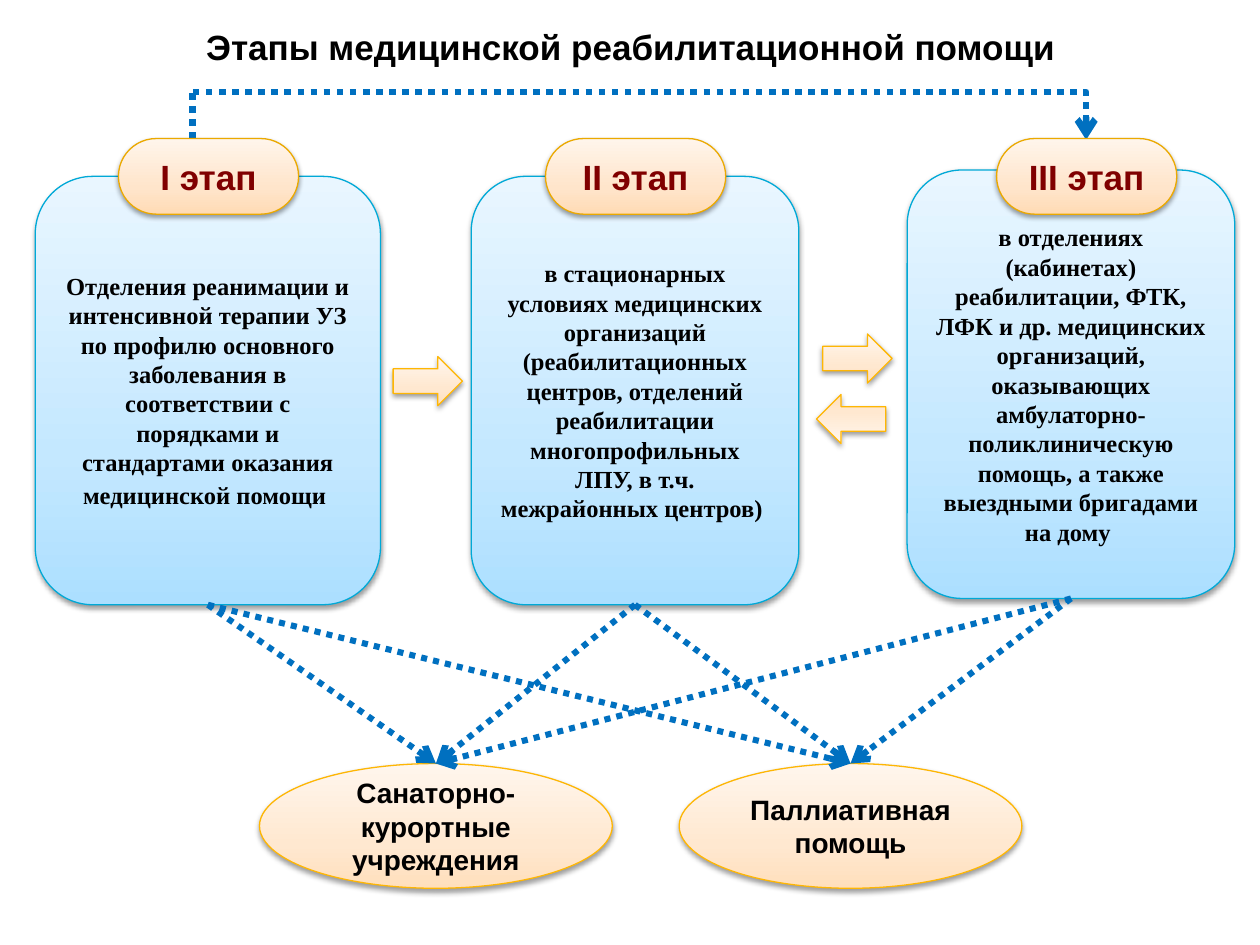
from copy import deepcopy

from lxml import etree
from pptx import Presentation
from pptx.dml.color import RGBColor
from pptx.enum.dml import MSO_LINE
from pptx.enum.shapes import MSO_CONNECTOR, MSO_SHAPE
from pptx.enum.text import MSO_ANCHOR, PP_ALIGN
from pptx.oxml.ns import qn
from pptx.util import Inches, Pt

ROUNDED, OVAL, ARROW = MSO_SHAPE.ROUNDED_RECTANGLE, MSO_SHAPE.OVAL, MSO_SHAPE.RIGHT_ARROW
STRAIGHT, ELBOW = MSO_CONNECTOR.STRAIGHT, MSO_CONNECTOR.ELBOW
DOTTED = MSO_LINE.ROUND_DOT
MIDDLE, CENTER = MSO_ANCHOR.MIDDLE, PP_ALIGN.CENTER
TOP, BOTTOM = 0, 2

COLORS = {"text": "000000", "badge_text": "800000", "route": "0070C0",
          "panel_line": "00A9D7", "accent_line": "FEB604", "badge_line": "EBA900"}
# Gradients run from the bottom edge to the top edge
GRADIENTS = {"panel": ("ACDFFF", "C4E8FF", "E9F6FF"),
             "accent": ("FFDFBC", "FFE8D0", "FFF6ED"),
             "badge": ("FFDBB5", "FFE5CB", "FFF5EB")}
STOPS = (0, 0.35, 1)
FORMATS = {"title": {"name": "Arial", "size": Pt(20), "bold": True},
           "panel": {"name": "Times New Roman", "size": Pt(14), "bold": True},
           "accent": {"name": "Arial", "size": Pt(16), "bold": True},
           "badge": {"name": "Arial", "size": Pt(20), "bold": True}}

deck = Presentation()
deck.slide_width, deck.slide_height = Inches(10), Inches(7.5)
page = deck.slides.add_slide(deck.slide_layouts[6])


def write(box, text, style, color="text"):
    frame = box.text_frame
    frame.word_wrap = True
    frame.vertical_anchor = MIDDLE
    para = frame.paragraphs[0]
    para.alignment = CENTER
    span = para.add_run()
    span.text = text
    for key, value in FORMATS[style].items():
        setattr(span.font, key, value)
    span.font.color.rgb = RGBColor.from_string(COLORS[color])
    return para


def add_block(kind, place, style):
    block = page.shapes.add_shape(kind, *map(Inches, place))
    block.line.color.rgb = RGBColor.from_string(COLORS[style + "_line"])
    block.line.width = Pt(0.75)
    # Three-stop gradient
    block.fill.gradient()
    block.fill.gradient_angle = 90
    stop_list = block._element.spPr.find(qn("a:gradFill")).find(qn("a:gsLst"))
    stop_list.insert(1, deepcopy(stop_list[0]))
    for stop, position, color in zip(block.fill.gradient_stops, STOPS, GRADIENTS[style]):
        stop.position = position
        stop.color.rgb = RGBColor.from_string(color)
    # Soft shadow below
    block.shadow.inherit = False
    effects = block._element.spPr.find(qn("a:effectLst"))
    shadow = etree.SubElement(effects, qn("a:outerShdw"), blurRad=str(Pt(3.1)),
                              dist=str(Pt(1.6)), dir="5400000", rotWithShape="0")
    tint = etree.SubElement(shadow, qn("a:srgbClr"), val="000000")
    etree.SubElement(tint, qn("a:alpha"), val="38000")
    return block


# Title
title = page.shapes.add_textbox(Inches(0.47), Inches(0), Inches(9.15), Inches(0.74))
write(title, "Этапы медицинской реабилитационной помощи ", "title")

# Stage panels
panels = []
for place, text in [
    ((0.28, 1.4, 2.74, 3.4),
     "Отделения реанимации и интенсивной терапии УЗ по профилю основного заболевания "
     "в соответствии с порядками и стандартами оказания медицинской помощи"),
    ((3.74, 1.4, 2.6, 3.4),
     "в стационарных условиях медицинских организаций (реабилитационных центров, "
     "отделений реабилитации многопрофильных ЛПУ, в т.ч. межрайонных центров) "),
    ((7.2, 1.35, 2.6, 3.4),
     "в отделениях (кабинетах) реабилитации, ФТК, ЛФК и др. медицинских организаций, "
     "оказывающих амбулаторно-поликлиническую помощь, а также выездными бригадами на дому "),
]:
    panel = add_block(ROUNDED, place, "panel")
    para = write(panel, text, "panel")
    panels.append(panel)
    if len(panels) == 1:
        span = para.add_run()
        span.text = " "
        span.font.size = Pt(16)

# Block arrows between the stages
for left, top, turn in [(3.12, 2.83, 0), (6.53, 2.65, 0), (6.48, 3.13, 180)]:
    add_block(ARROW, (left, top, 0.55, 0.39), "accent").rotation = turn

# Follow-up care
ovals = []
for left, width, text in [(2.06, 2.8, "Санаторно-курортные учреждения"),
                          (5.39, 2.72, "Паллиативная помощь")]:
    oval = add_block(OVAL, (left, 6.06, width, 0.99), "accent")
    write(oval, text, "accent")
    ovals.append(oval)

# Dotted routes: each stage to each kind of care, then the bypass from stage I to III
routes = []
for panel in panels:
    for oval in ovals:
        route = page.shapes.add_connector(STRAIGHT, 0, 0, 0, 0)
        route.begin_connect(panel, BOTTOM)
        route.end_connect(oval, TOP)
        routes.append((route, 3.5, True))
bypass = page.shapes.add_connector(ELBOW, *map(Inches, (1.53, 0.73, 8.62, 1.11)))
bend = bypass._element.spPr.find(qn("a:prstGeom")).find(qn("a:avLst"))
etree.SubElement(bend, qn("a:gd"), name="adj1", fmla="val 100000")
riser = page.shapes.add_connector(STRAIGHT, *map(Inches, (1.53, 0.74, 1.53, 1.18)))
routes += [(bypass, 3.75, True), (riser, 3.75, False)]

for route, width, has_head in routes:
    route.line.color.rgb = RGBColor.from_string(COLORS["route"])
    route.line.width = Pt(width)
    route.line.dash_style = DOTTED
    properties = route._element.spPr
    if has_head:
        etree.SubElement(properties.find(qn("a:ln")), qn("a:tailEnd"), type="arrow")
    etree.SubElement(properties, qn("a:effectLst"))

# Stage badges
for left, text in [(0.94, "I этап"), (4.33, "II этап"), (7.91, "III этап")]:
    badge = add_block(ROUNDED, (left, 1.1, 1.43, 0.6), "badge")
    badge.adjustments[0] = 0.5
    for side in ("left", "top", "right", "bottom"):
        setattr(badge.text_frame, "margin_" + side, Inches(0.04))
    write(badge, text, "badge", "badge_text")

deck.save("out.pptx")
